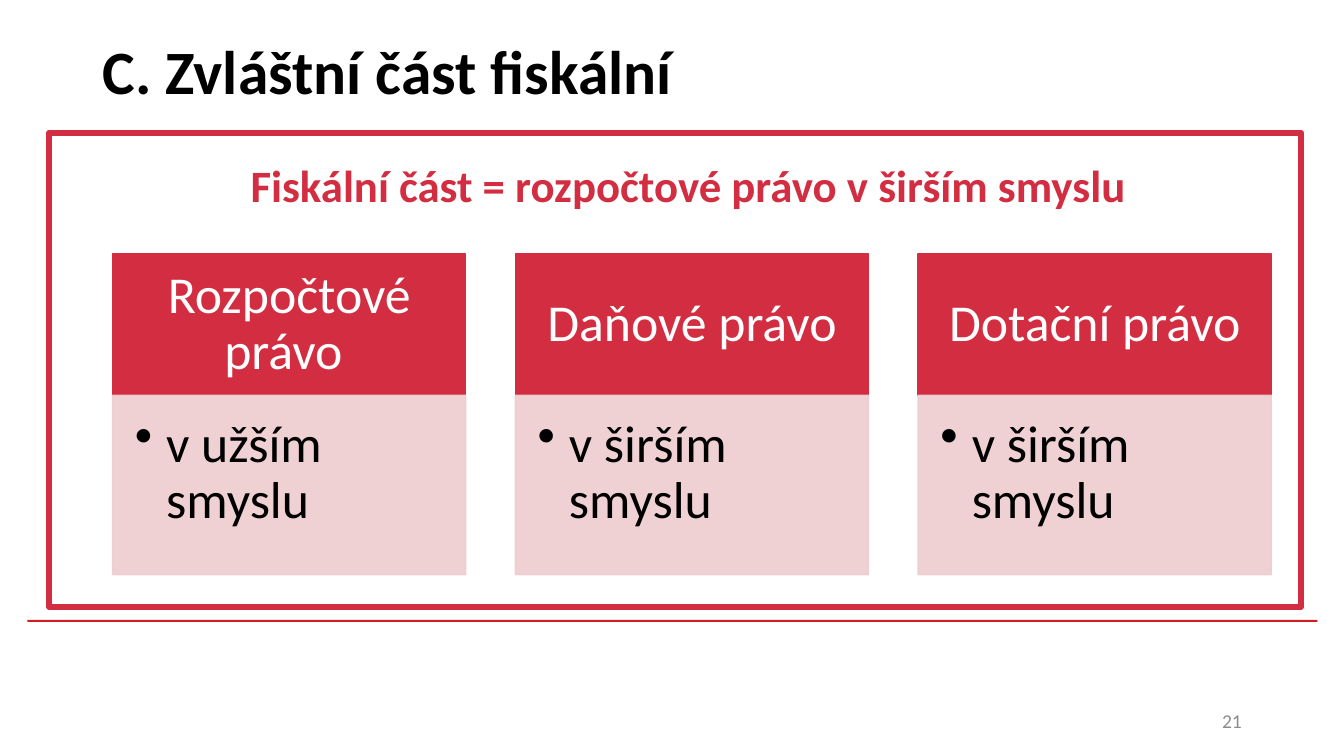
from dataclasses import dataclass

from lxml import etree
from pptx import Presentation
from pptx.dml.color import RGBColor
from pptx.enum import shapes, text
from pptx.oxml import ns
from pptx.util import Cm, Pt

RED, PINK, WHITE, BLACK, GREY = "D22D40", "EECDCF", "FFFFFF", "000000", "8C8C8C"
FONT = "Calibri"
CENTER, LEFT, RIGHT = text.PP_ALIGN.CENTER, text.PP_ALIGN.LEFT, text.PP_ALIGN.RIGHT
MIDDLE, TOP = text.MSO_ANCHOR.MIDDLE, text.MSO_ANCHOR.TOP


@dataclass
class Box:
    left: float
    top: float
    width: float
    height: float

    def lengths(self):
        return Cm(self.left), Cm(self.top), Cm(self.width), Cm(self.height)


@dataclass
class Branch:
    heading: str
    scope: str


BRANCHES = [
    Branch("Rozpočtové právo ", "v užším smyslu"),
    Branch("Daňové právo", "v širším smyslu"),
    Branch("Dotační právo", "v širším smyslu"),
]
COLUMN_LEFT, COLUMN_WIDTH, COLUMN_PITCH = 2.84, 8.9, 10.15
HEADING_TOP, HEADING_HEIGHT, SCOPE_HEIGHT = 6.4, 3.56, 4.52


def color(value: str) -> RGBColor:
    return RGBColor.from_string(value)


def set_alpha(fill, percent: int) -> None:
    """Make a solid fill partly transparent."""
    for srgb in fill.iter(ns.qn("a:srgbClr")):
        etree.SubElement(srgb, ns.qn("a:alpha")).set("val", str(percent * 1000))


def add_rectangle(slide, box: Box, fill: str, line: str = "", line_width: float = 1,
                  alpha: int = 100):
    shape = slide.shapes.add_shape(shapes.MSO_SHAPE.RECTANGLE, *box.lengths())
    shape.shadow.inherit = False
    shape.fill.solid()
    shape.fill.fore_color.rgb = color(fill)
    if line:
        shape.line.color.rgb = color(line)
        shape.line.width = Pt(line_width)
    else:
        shape.line.fill.background()
    if alpha < 100:
        set_alpha(shape.element.spPr, alpha)
    return shape


def add_bullet(paragraph, indent: float) -> None:
    properties = paragraph._p.get_or_add_pPr()
    properties.set("marL", str(Cm(indent)))
    properties.set("indent", str(-Cm(indent)))
    etree.SubElement(properties, ns.qn("a:buChar")).set("char", "•")


def write(shape, content: str, *, size: float, fill: str, bold: bool = False,
          align=LEFT, anchor=MIDDLE, insets=(0.25, 0.13, 0.25, 0.13),
          line_spacing: float = 1, bullet_indent: float = 0) -> None:
    frame = shape.text_frame
    frame.word_wrap = True
    frame.auto_size = text.MSO_AUTO_SIZE.NONE
    frame.vertical_anchor = anchor
    (frame.margin_left, frame.margin_top,
     frame.margin_right, frame.margin_bottom) = map(Cm, insets)
    paragraph = frame.paragraphs[0]
    paragraph.alignment = align
    paragraph.line_spacing = line_spacing
    if bullet_indent:
        add_bullet(paragraph, bullet_indent)
    run = paragraph.add_run()
    run.text = content
    run.font.name = FONT
    run.font.size = Pt(size)
    run.font.bold = bold
    run.font.color.rgb = color(fill)


def add_branch(slide, branch: Branch, left: float) -> None:
    heading = add_rectangle(
        slide, Box(left, HEADING_TOP, COLUMN_WIDTH, HEADING_HEIGHT), RED, RED)
    write(heading, branch.heading, size=37, fill=WHITE, align=CENTER,
          insets=(0.74, 0.41, 0.74, 0.41), line_spacing=0.9)
    scope = add_rectangle(
        slide, Box(left, HEADING_TOP + HEADING_HEIGHT, COLUMN_WIDTH, SCOPE_HEIGHT),
        PINK, PINK, alpha=90)
    write(scope, branch.scope, size=37, fill=BLACK, anchor=TOP,
          insets=(0.56, 0.56, 0.74, 0.81), line_spacing=0.9, bullet_indent=0.79)


def main() -> None:
    presentation = Presentation()
    presentation.slide_width, presentation.slide_height = Cm(33.87), Cm(19.05)
    slide = presentation.slides.add_slide(presentation.slide_layouts[5])

    add_rectangle(slide, Box(0.69, 15.62, 32.51, 0.05), "CD1F21")
    add_rectangle(slide, Box(1.24, 3.35, 31.55, 11.94), WHITE, RED, 4.5)

    title = slide.shapes.title
    title.left, title.top, title.width, title.height = Box(2.34, 0.05, 29.21, 3.68).lengths()
    write(title, "C. Zvláštní část fiskální", size=44, fill=BLACK, bold=True,
          line_spacing=0.9)
    slide.shapes._spTree.append(title.element)

    for index, branch in enumerate(BRANCHES):
        add_branch(slide, branch, COLUMN_LEFT + index * COLUMN_PITCH)

    number = slide.shapes.add_textbox(*Box(23.93, 17.65, 7.62, 1.02).lengths())
    write(number, "21", size=14, fill=GREY, align=RIGHT)
    subtitle = slide.shapes.add_textbox(*Box(2.87, 3.84, 28.96, 1.63).lengths())
    write(subtitle, "Fiskální část = rozpočtové právo v širším smyslu", size=32,
          fill=RED, bold=True, align=CENTER, anchor=TOP)

    presentation.save("out.pptx")


if __name__ == "__main__":
    main()
